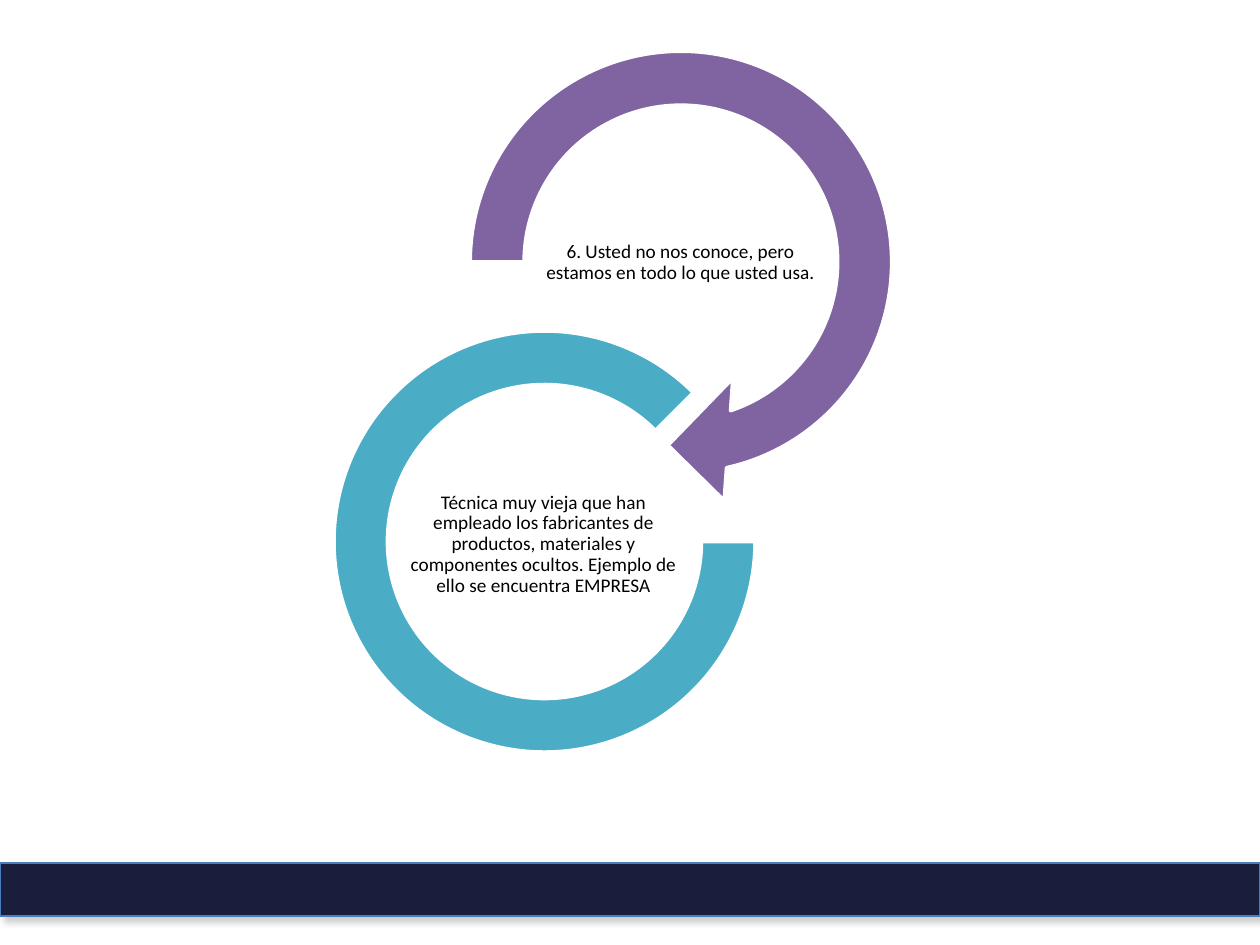
from lxml import etree
from pptx import Presentation
from pptx import util as u
from pptx.dml.color import RGBColor
from pptx.enum import shapes, text
from pptx.oxml.ns import qn

PX = 914400 / 126
COLORS = {"navy": "191E3C", "edge": "4A7EBB", "purple": "8064A2",
          "teal": "4BACC6", "white": "FFFFFF", "black": "000000",
          "shadow": "808080"}


def px(value):
    return u.Emu(round(value * PX))


def color(name):
    return RGBColor.from_string(COLORS[name])


class SlideBuilder:
    font = "Calibri"
    size = u.Pt(11)
    inset = px(1)

    def __init__(self, slide):
        self.slide = slide

    def shape(self, kind, box, fill, line, width, adjustments=()):
        item = self.slide.shapes.add_shape(kind, *map(px, box))
        item.shadow.inherit = False
        item.fill.solid()
        item.fill.fore_color.rgb = color(fill)
        item.line.color.rgb = color(line)
        item.line.width = u.Pt(width)
        for index, value in enumerate(adjustments):
            item.adjustments[index] = value
        return item

    def drop_shadow(self, item, blur, distance, angle, opacity):
        effects = item._element.spPr.find(qn("a:effectLst"))
        shadow = etree.SubElement(
            effects, qn("a:outerShdw"), blurRad=str(u.Pt(blur)),
            dist=str(u.Pt(distance)), dir=str(angle * 60000),
            algn="tl", rotWithShape="0")
        tint = etree.SubElement(shadow, qn("a:srgbClr"), val=COLORS["shadow"])
        etree.SubElement(tint, qn("a:alpha"), val=str(opacity * 1000))

    def label(self, box, words):
        frame = self.slide.shapes.add_textbox(*map(px, box)).text_frame
        frame.word_wrap = True
        frame.vertical_anchor = text.MSO_ANCHOR.MIDDLE
        frame.margin_left = frame.margin_right = self.inset
        frame.margin_top = frame.margin_bottom = self.inset
        frame.text = words
        paragraph = frame.paragraphs[0]
        paragraph.alignment = text.PP_ALIGN.CENTER
        paragraph.line_spacing = 0.9
        paragraph.space_after = u.Pt(4)
        font = paragraph.runs[0].font
        font.name, font.size = self.font, self.size
        font.color.rgb = color("black")


def main():
    deck = Presentation()
    deck.slide_width, deck.slide_height = px(1260), px(945)
    page = SlideBuilder(deck.slides.add_slide(deck.slide_layouts[6]))
    kinds = shapes.MSO_SHAPE

    # Footer band
    footer = page.shape(kinds.RECTANGLE, (0, 863, 1260, 53),
                        "navy", "edge", 0.75)
    page.drop_shadow(footer, blur=4, distance=3, angle=45, opacity=40)

    # Slogan inside the arrow
    page.shape(kinds.CIRCULAR_ARROW, (436, 17, 490, 490), "purple", "white", 2,
               (0.11, 11.42, 45, 108, 0.125))
    page.label((544, 194, 273, 137),
               "6. Usted no nos conoce, pero estamos en todo lo que usted usa.")

    # Explanation inside the open ring
    page.shape(kinds.BLOCK_ARC, (334, 331, 421, 421), "teal", "white", 2,
               (0, 189, 0.127))
    page.label((407, 476, 273, 137),
               "Técnica muy vieja que han empleado los fabricantes de productos, "
               "materiales y componentes ocultos. Ejemplo de ello se encuentra "
               "EMPRESA")

    deck.save("out.pptx")


if __name__ == "__main__":
    main()
